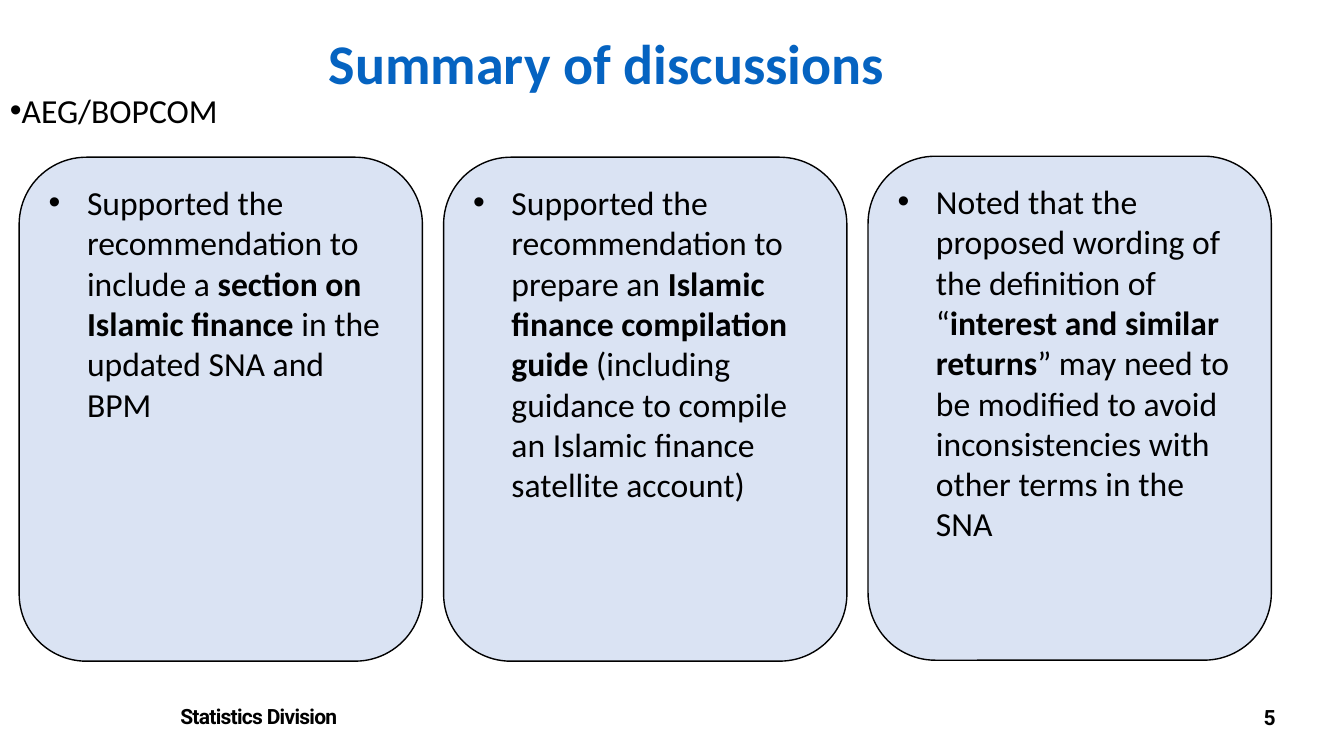
from dataclasses import dataclass

from lxml.etree import SubElement
from pptx import Presentation
from pptx.dml.color import RGBColor
from pptx.enum.shapes import MSO_SHAPE
from pptx.enum.text import MSO_ANCHOR, MSO_AUTO_SIZE, PP_ALIGN
from pptx.oxml.ns import qn
from pptx.util import Emu, Pt

EMU_PER_PX = 9144  # 100 px to the inch
COLOURS = {"text": "000000", "title": "0563C1", "card": "DAE3F3", "paper": "FFFFFF"}

BODY = {"name": "Calibri", "size": Pt(24), "bold": False}
TITLE = {"name": "Calibri", "size": Pt(40), "bold": True}
FOOTER = {"name": "Roboto", "size": Pt(15), "bold": True}

CARD_LEFT, CARD_PITCH, CARD_WIDTH, CARD_HEIGHT = 19, 421, 400, 500


@dataclass
class Label:
    text: str
    box: tuple[int, int, int, int]
    font: dict
    colour: str = "text"
    alignment: PP_ALIGN = PP_ALIGN.LEFT
    bullet_margin: int | None = None
    footer: bool = False


@dataclass
class Card:
    top: int
    before: str
    emphasis: str
    after: str


LABELS = [
    Label("Statistics Division", (169, 693, 584, 35), FOOTER, footer=True),
    Label("5", (1085, 694, 190, 35), FOOTER, alignment=PP_ALIGN.RIGHT, footer=True),
    Label("Summary of discussions", (166, 23, 871, 77), TITLE, "title", PP_ALIGN.CENTER),
    Label("AEG/BOPCOM", (0, 84, 1233, 50), BODY, bullet_margin=6),
]

CARDS = [
    Card(156, "Supported the recommendation to include a ",
         "section on Islamic finance", " in the updated SNA and BPM"),
    Card(156, "Supported the recommendation to prepare an ",
         "Islamic finance compilation guide",
         " (including guidance to compile an Islamic finance satellite account)"),
    Card(155, "Noted that the proposed wording of the definition of “",
         "interest and similar returns",
         "” may need to be modified to avoid inconsistencies with other terms in the SNA"),
]


def px(value: int) -> Emu:
    return Emu(value * EMU_PER_PX)


def colour(name: str) -> RGBColor:
    return RGBColor.from_string(COLOURS[name])


def add_bullet(paragraph, margin: int) -> None:
    properties = paragraph._p.get_or_add_pPr()
    properties.set("marL", str(px(margin)))
    properties.set("indent", str(px(-38)))
    SubElement(properties, qn("a:buFont"), typeface="Arial")
    SubElement(properties, qn("a:buChar"), char="•")


def add_run(paragraph, text: str, font: dict, colour_name: str = "text"):
    run = paragraph.add_run()
    run.text = text
    for attribute, value in font.items():
        setattr(run.font, attribute, value)
    run.font.color.rgb = colour(colour_name)
    return run


def draw_label(slide, label: Label) -> None:
    shape = slide.shapes.add_textbox(*map(px, label.box))
    frame = shape.text_frame
    frame.word_wrap = True
    frame.auto_size = MSO_AUTO_SIZE.SHAPE_TO_FIT_TEXT
    paragraph = frame.paragraphs[0]
    paragraph.alignment = label.alignment
    if label.bullet_margin is not None:
        add_bullet(paragraph, label.bullet_margin)
    run = add_run(paragraph, label.text, label.font, label.colour)
    if label.footer:
        shape.fill.solid()
        shape.fill.fore_color.rgb = colour("paper")
        paragraph.space_after = Pt(18)
        run.font._element.set("spc", "-50")


def draw_card(slide, index: int, card: Card) -> None:
    box = (CARD_LEFT + index * CARD_PITCH, card.top, CARD_WIDTH, CARD_HEIGHT)
    shape = slide.shapes.add_shape(MSO_SHAPE.ROUNDED_RECTANGLE, *map(px, box))
    shape.shadow.inherit = False
    shape.fill.solid()
    shape.fill.fore_color.rgb = colour("card")
    shape.line.color.rgb = colour("text")
    shape.line.width = Pt(1)
    frame = shape.text_frame
    frame.word_wrap = True
    frame.vertical_anchor = MSO_ANCHOR.TOP
    paragraph = frame.paragraphs[0]
    paragraph.alignment = PP_ALIGN.LEFT
    add_bullet(paragraph, 38)
    add_run(paragraph, card.before, BODY)
    add_run(paragraph, card.emphasis, BODY | {"bold": True})
    add_run(paragraph, card.after, BODY)


def main() -> None:
    presentation = Presentation()
    presentation.slide_width, presentation.slide_height = px(1333), px(750)
    slide = presentation.slides.add_slide(presentation.slide_layouts[6])

    # Footer, title and heading
    for label in LABELS:
        draw_label(slide, label)

    # Discussion cards
    for index, card in enumerate(CARDS):
        draw_card(slide, index, card)

    presentation.save("out.pptx")


if __name__ == "__main__":
    main()
